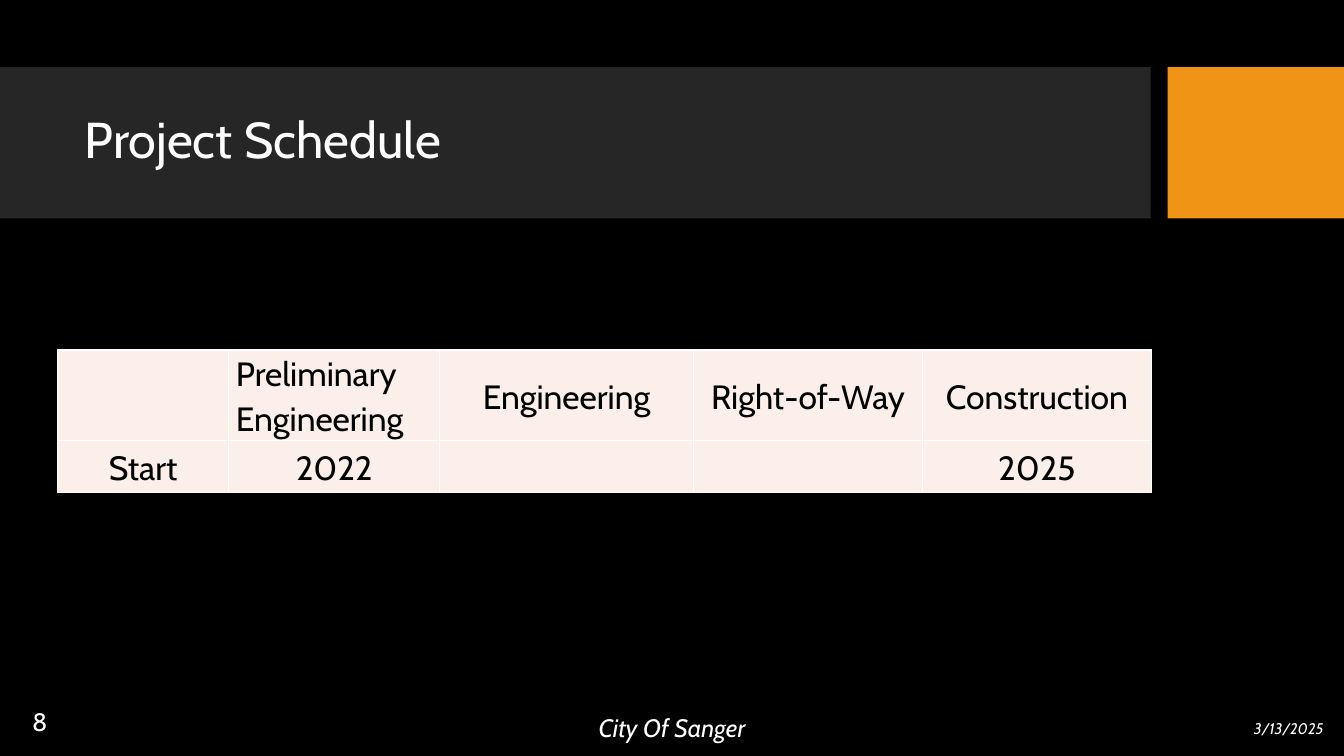
from dataclasses import dataclass

from lxml import etree
from pptx import Presentation
from pptx import util as u
from pptx.dml.color import RGBColor
from pptx.enum import shapes, text
from pptx.oxml import ns

Pt = u.Pt
LEFT, MID, RIGHT = text.PP_ALIGN.LEFT, text.PP_ALIGN.CENTER, text.PP_ALIGN.RIGHT


@dataclass(frozen=True)
class Theme:
    """Colours, font and type sizes of the slide."""
    back: str = "000000"
    band: str = "262626"
    gold: str = "F09415"
    cell: str = "FCEEE8"
    dark: str = "000000"
    light: str = "FFFFFF"
    font: str = "Cabin"
    title: int = 36
    table: int = 24
    foot: int = 18
    date: int = 11


THEME = Theme()


def paint(fill, tone):
    """Fill with one solid colour."""
    fill.solid()
    fill.fore_color.rgb = RGBColor.from_string(tone)


def write(frame, words, size, tone=THEME.light, align=LEFT, space=1.0, slant=False):
    """Write one formatted paragraph into a text frame."""
    frame.word_wrap = True
    frame.vertical_anchor = text.MSO_ANCHOR.MIDDLE
    line = frame.paragraphs[0]
    line.alignment = align
    line.line_spacing = space
    run = line.add_run()
    run.text = words
    run.font.name = THEME.font
    run.font.size = Pt(size)
    run.font.italic = slant
    run.font.color.rgb = RGBColor.from_string(tone)


def block(slide, place, tone):
    """Add a plain filled rectangle."""
    shape = slide.shapes.add_shape(shapes.MSO_SHAPE.RECTANGLE, *map(Pt, place))
    shape.shadow.inherit = False
    shape.line.fill.background()
    paint(shape.fill, tone)
    return shape


def label(slide, place, words, size, **style):
    """Add a text box with one paragraph."""
    box = slide.shapes.add_textbox(*map(Pt, place))
    write(box.text_frame, words, size, **style)


def edge(cell, tone):
    """Draw a thin line on all four sides of a cell."""
    props = cell._tc.get_or_add_tcPr()
    for spot, side in enumerate(("lnL", "lnR", "lnT", "lnB")):
        line = etree.Element(ns.qn(f"a:{side}"), w=str(Pt(1)))
        fill = etree.SubElement(line, ns.qn("a:solidFill"))
        etree.SubElement(fill, ns.qn("a:srgbClr"), val=tone)
        props.insert(spot, line)


def grid(slide, spot, wide, high, rows):
    """Add a table with even fill, white borders and centred text."""
    size = sum(wide), sum(high)
    table = slide.shapes.add_table(len(high), len(wide), *map(Pt, spot + size)).table
    for col, width in zip(table.columns, wide):
        col.width = Pt(width)
    for row, height, words in zip(table.rows, high, rows):
        row.height = Pt(height)
        for cell, word in zip(row.cells, words):
            paint(cell.fill, THEME.cell)
            edge(cell, THEME.light)
            cell.margin_left = cell.margin_right = Pt(5)
            cell.margin_top = cell.margin_bottom = 0
            cell.vertical_anchor = text.MSO_ANCHOR.MIDDLE
            if word:
                align = LEFT if word.startswith("Preliminary") else MID
                write(cell.text_frame, word, THEME.table, tone=THEME.dark,
                      align=align, space=1.1)
                cell.vertical_anchor = text.MSO_ANCHOR.MIDDLE


def main():
    """Build the project schedule slide."""
    deck = Presentation()
    deck.slide_width, deck.slide_height = Pt(960), Pt(540)
    slide = deck.slides.add_slide(deck.slide_layouts[6])
    paint(slide.background.fill, THEME.back)
    block(slide, (0, 48, 822, 108), THEME.band)
    block(slide, (834, 48, 126, 108), THEME.gold)
    label(slide, (53.5, 59, 757, 85), "Project Schedule", THEME.title, space=0.9)
    foot = block(slide, (0, 499, 960, 41), THEME.back)
    write(foot.text_frame, "City Of Sanger", THEME.foot, align=MID, slant=True)
    label(slide, (736.5, 505.5, 216, 29), "3/13/2025", THEME.date, align=RIGHT, slant=True)
    label(slide, (3.5, 490, 50, 50), "8", THEME.foot, align=MID)
    grid(slide, (41, 250), (122.5, 150.5, 181.5, 163.5, 163.5), (64.5, 37.5), (
        ("", "Preliminary Engineering", "Engineering", "Right-of-Way", "Construction"),
        ("Start", "2022", "", "", "2025"),
    ))
    deck.save("out.pptx")


if __name__ == "__main__":
    main()
